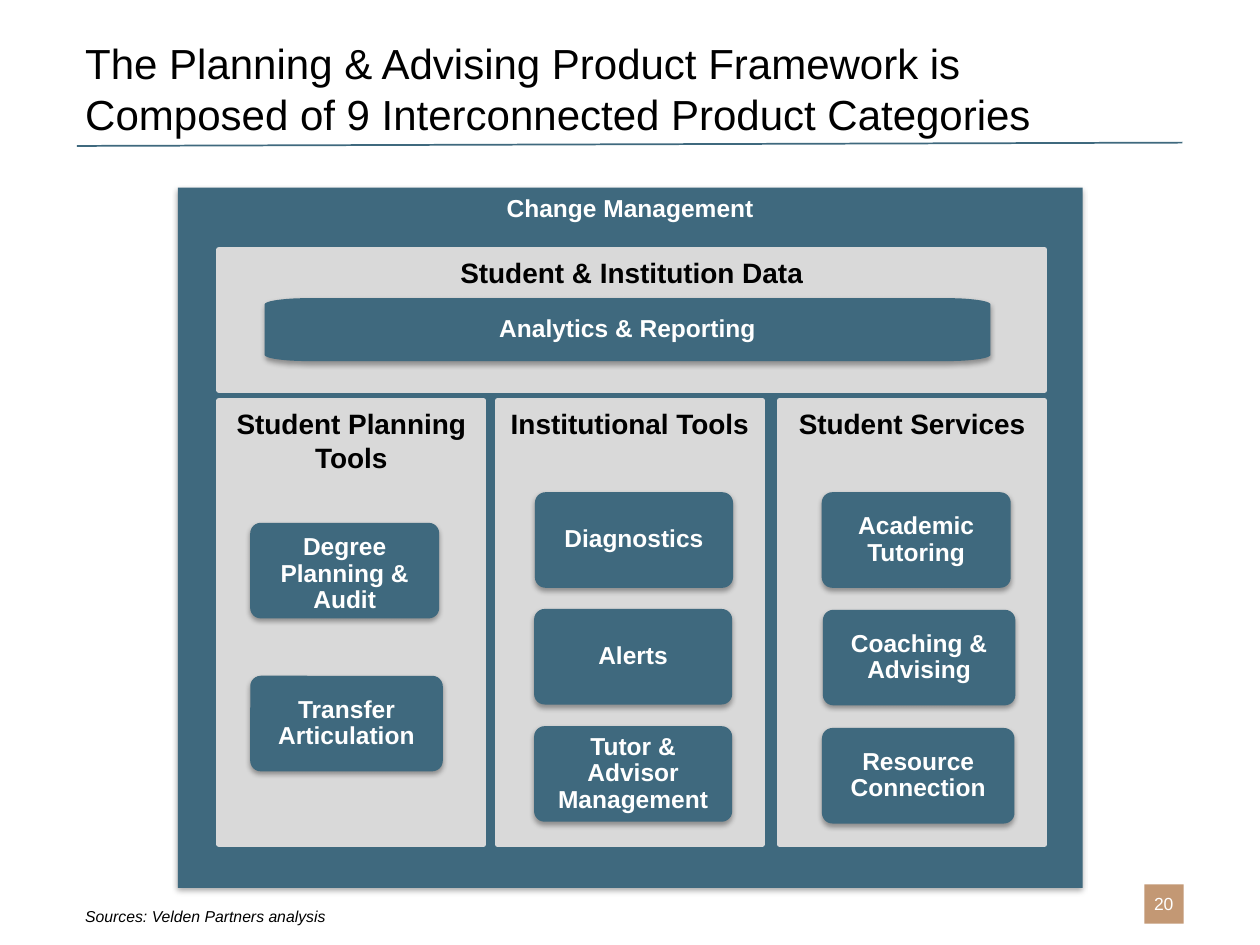
"""Build the planning and advising product framework slide."""
import math

from lxml import etree
from pptx import Presentation
from pptx.dml.color import RGBColor
from pptx.enum.shapes import MSO_CONNECTOR, MSO_SHAPE
from pptx.enum.text import MSO_ANCHOR, PP_ALIGN
from pptx.oxml.ns import qn
from pptx.util import Pt

RECT, ROUNDED = MSO_SHAPE.RECTANGLE, MSO_SHAPE.ROUNDED_RECTANGLE
STRAIGHT = MSO_CONNECTOR.STRAIGHT
TOP, MIDDLE, BOTTOM = MSO_ANCHOR.TOP, MSO_ANCHOR.MIDDLE, MSO_ANCHOR.BOTTOM
LEFT, CENTER = PP_ALIGN.LEFT, PP_ALIGN.CENTER

COLORS = {
    "teal": "3F697E",
    "panel": "D9D9D9",
    "tan": "C39874",
    "black": "000000",
    "white": "FFFFFF",
}
FONT = "Arial"
CARD_HEIGHT = 54.6
COLUMN_TOP, COLUMN_WIDTH, COLUMN_HEIGHT = 229, 151.2, 253.4

COLUMNS = [
    ("Student Planning Tools", 125.2, [
        ("Degree Planning & Audit", 143, 298.8, 108, TOP),
        ("Transfer Articulation", 143, 386.2, 110, MIDDLE),
    ]),
    ("Institutional Tools", 284.4, [
        ("Diagnostics", 305.7, 281.3, 113.2, MIDDLE),
        ("Alerts", 305.2, 348, 113.2, MIDDLE),
        ("Tutor & Advisor Management", 305.2, 415, 113.2, MIDDLE),
    ]),
    ("Student Services", 445.6, [
        ("Academic Tutoring", 469.6, 281.3, 108, MIDDLE),
        ("Coaching & Advising", 470.2, 348.5, 110, MIDDLE),
        ("Resource Connection", 469.7, 416, 110, MIDDLE),
    ]),
]


def color(name):
    """Return the named colour."""
    return RGBColor.from_string(COLORS[name])


def write_text(shape, text, size=14, ink="white", bold=False, italic=False,
               align=CENTER, anchor=MIDDLE, inset=None, spacing=None):
    """Write one formatted paragraph into a shape."""
    frame = shape.text_frame
    frame.word_wrap = True
    frame.vertical_anchor = anchor
    if inset is not None:
        frame.margin_left = frame.margin_right = Pt(inset)
        frame.margin_top = frame.margin_bottom = Pt(inset)
    paragraph = frame.paragraphs[0]
    paragraph.alignment = align
    if spacing:
        paragraph.line_spacing = spacing
    run = paragraph.add_run()
    run.text = text
    font = run.font
    font.name, font.size = FONT, Pt(size)
    font.bold, font.italic = bold, italic
    font.color.rgb = color(ink)


def add_label(slide, text, box, **text_format):
    """Add a text box."""
    label = slide.shapes.add_textbox(*map(Pt, box))
    write_text(label, text, **text_format)


def paint(shape, fill, border=None):
    """Set a flat fill and an optional border."""
    shape.shadow.inherit = False
    shape.fill.solid()
    shape.fill.fore_color.rgb = color(fill)
    if border:
        shape.line.color.rgb = color(fill)
        shape.line.width = Pt(border)
    else:
        shape.line.fill.background()


def add_shadow(shape):
    """Give a painted shape a soft shadow below it."""
    effects = shape.element.spPr.find(qn("a:effectLst"))
    shadow = etree.SubElement(
        effects, qn("a:outerShdw"), blurRad=str(Pt(3.1)), dist=str(Pt(1.8)),
        dir="5400000", rotWithShape="0")
    tint = etree.SubElement(shadow, qn("a:srgbClr"), val=COLORS["black"])
    etree.SubElement(tint, qn("a:alpha"), val="35000")


def finish_product(shape, text, anchor=MIDDLE):
    """Apply the shared look of a product category."""
    paint(shape, "teal")
    add_shadow(shape)
    write_text(shape, text, bold=True, anchor=anchor, inset=5, spacing=0.9)


def add_panel(slide, title, box):
    """Add a grey panel with a heading."""
    panel = slide.shapes.add_shape(RECT, *map(Pt, box))
    paint(panel, "panel", border=3)
    write_text(panel, title, size=16, ink="black", bold=True, anchor=TOP)


def add_card(slide, text, left, top, width, anchor):
    """Add a rounded product card."""
    card = slide.shapes.add_shape(
        ROUNDED, Pt(left), Pt(top), Pt(width), Pt(CARD_HEIGHT))
    card.adjustments[0] = 0.11
    finish_product(card, text, anchor)


def add_bar(slide, text, box, radius_x, radius_y, steps=12):
    """Add a product bar with elliptical corners."""
    left, top, width, height = box
    centers = [
        (left + width - radius_x, top + height - radius_y),
        (left + radius_x, top + height - radius_y),
        (left + radius_x, top + radius_y),
        (left + width - radius_x, top + radius_y),
    ]
    outline = []
    for quarter, (x, y) in enumerate(centers):
        for step in range(steps + 1):
            angle = (quarter + step / steps) * math.pi / 2
            outline.append((Pt(x + radius_x * math.cos(angle)),
                            Pt(y + radius_y * math.sin(angle))))
    builder = slide.shapes.build_freeform(*outline[0])
    builder.add_line_segments(outline[1:], close=True)
    finish_product(builder.convert_to_shape(), text)


def add_rule(slide, start, end):
    """Add the thin line under the title."""
    rule = slide.shapes.add_connector(STRAIGHT, *map(Pt, start + end))
    rule.line.color.rgb = color("teal")
    rule.line.width = Pt(1)
    etree.SubElement(rule.element.spPr, qn("a:effectLst"))


def add_page_furniture(slide):
    """Add the title, rule, source line and page number."""
    badge = slide.shapes.add_shape(RECT, *map(Pt, (654, 505.4, 22.4, 22.4)))
    paint(badge, "tan")
    add_rule(slide, (44, 83.4), (675.6, 81.5))
    add_label(slide, "20", (646, 502, 38, 29), size=10)
    add_label(slide, "Sources: Velden Partners analysis",
              (41.6, 482.4, 495.4, 50.4), size=9, ink="black", italic=True,
              align=LEFT, anchor=BOTTOM)
    add_label(slide, "The Planning & Advising Product Framework is "
              "Composed of 9 Interconnected Product Categories",
              (41.6, 8, 635, 74.8), size=24, ink="black", align=LEFT,
              anchor=BOTTOM)


def add_framework(slide):
    """Add the frame, its panels and the product categories."""
    frame = slide.shapes.add_shape(RECT, *map(Pt, (101.6, 107.2, 517, 400.2)))
    finish_product(frame, "Change Management", TOP)
    add_panel(slide, "Student & Institution Data", (125.2, 142.6, 471.6, 80.4))
    add_bar(slide, "Analytics & Reporting", (151.2, 170.4, 414.8, 36), 25, 3.6)
    for title, left, cards in COLUMNS:
        add_panel(slide, title,
                  (left, COLUMN_TOP, COLUMN_WIDTH, COLUMN_HEIGHT))
        for card in cards:
            add_card(slide, *card)


def main():
    """Build and save the slide."""
    deck = Presentation()
    deck.slide_width, deck.slide_height = Pt(720), Pt(540)
    slide = deck.slides.add_slide(deck.slide_layouts[6])
    add_page_furniture(slide)
    add_framework(slide)
    deck.save("out.pptx")


if __name__ == "__main__":
    main()
